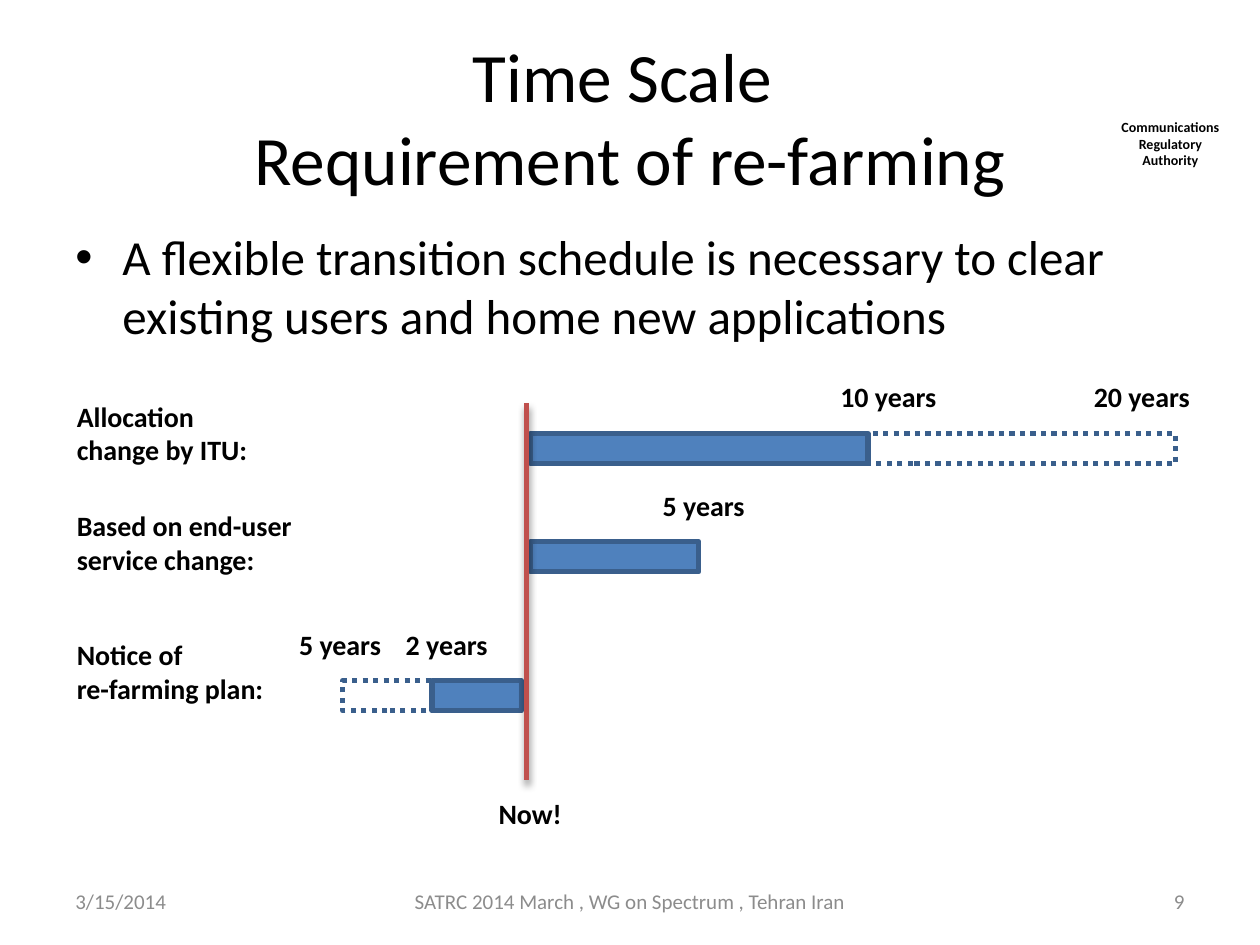
from lxml import etree
from pptx import Presentation
from pptx import util as u
from pptx.dml.color import RGBColor
from pptx.enum import dml, shapes, text
from pptx.oxml.ns import qn

BLACK = RGBColor(0x00, 0x00, 0x00)
GREY = RGBColor(0x8C, 0x8C, 0x8C)
BLUE = RGBColor(0x4F, 0x81, 0xBD)
NAVY = RGBColor(0x3A, 0x5F, 0x8C)
RED = RGBColor(0xC0, 0x50, 0x4D)
LEFT, CENTER, RIGHT = text.PP_ALIGN.LEFT, text.PP_ALIGN.CENTER, text.PP_ALIGN.RIGHT

BAR_H = 0.61
NOW_X = 10.62
LABEL_X = 1.3
YEARS_W = 2.6


def add_text(s, words, x, y, w, h, size=16, color=BLACK, bold=True, align=LEFT,
             middle=False, bullet=False):
    sp = s.shapes.add_textbox(u.Cm(x), u.Cm(y), u.Cm(w), u.Cm(h))
    tf = sp.text_frame
    tf.word_wrap = True
    tf.vertical_anchor = text.MSO_ANCHOR.MIDDLE if middle else text.MSO_ANCHOR.TOP
    p = tf.paragraphs[0]
    p.text = words
    p.alignment = align
    if bullet:
        pPr = p._p.get_or_add_pPr()
        pPr.set("marL", str(u.Cm(0.95)))
        pPr.set("indent", str(-u.Cm(0.95)))
        etree.SubElement(pPr, qn("a:buFont"), typeface="Arial")
        etree.SubElement(pPr, qn("a:buChar"), char="•")
    for r in p.runs:
        r.font.name = "Calibri"
        r.font.size = u.Pt(size)
        r.font.bold = bold
        r.font.color.rgb = color


def add_bar(s, x, y, w, dotted=False):
    sp = s.shapes.add_shape(shapes.MSO_SHAPE.RECTANGLE,
                            u.Cm(x), u.Cm(y), u.Cm(w), u.Cm(BAR_H))
    sp.shadow.inherit = False
    sp.line.color.rgb = NAVY
    sp.line.width = u.Pt(3)
    if dotted:
        sp.fill.background()
        sp.line.dash_style = dml.MSO_LINE.ROUND_DOT
    else:
        sp.fill.solid()
        sp.fill.fore_color.rgb = BLUE


def add_now_line(s, top, bottom):
    line = s.shapes.add_connector(shapes.MSO_CONNECTOR.STRAIGHT,
                                  u.Cm(NOW_X), u.Cm(top), u.Cm(NOW_X), u.Cm(bottom))
    line.line.color.rgb = RED
    line.line.width = u.Pt(3)
    effects = etree.SubElement(line._element.spPr, qn("a:effectLst"))
    shadow = etree.SubElement(effects, qn("a:outerShdw"), blurRad=str(u.Pt(4)),
                              dist=str(u.Pt(3)), dir="5400000", rotWithShape="0")
    color = etree.SubElement(shadow, qn("a:srgbClr"), val=str(BLACK))
    etree.SubElement(color, qn("a:alpha"), val="43000")


def add_timeline(s):
    for words, y in (("Allocation \vchange by ITU:", 7.92),
                     ("Based on end-user \vservice change:", 10.13),
                     ("Notice of \vre-farming plan:", 12.73)):
        add_text(s, words, LABEL_X, y, 5.3, 1.63)

    for x, y, w, dotted in ((13.11, 8.74, 10.59, True),
                            (10.69, 8.74, 6.81, False),
                            (10.69, 10.92, 3.4, False),
                            (6.91, 13.72, 1.8, True),
                            (8.71, 13.72, 1.8, False)):
        add_bar(s, x, y, w, dotted)

    for words, x, y in (("10 years", 16.69, 7.52), ("20 years", 21.8, 7.52),
                        ("5 years", 13.11, 9.73),
                        ("5 years", 5.78, 12.52), ("2 years", 7.93, 12.52)):
        add_text(s, words, x, y, YEARS_W, 0.94)

    add_now_line(s, 8.13, 15.72)
    add_text(s, "Now!", 9.09, 15.93, 3.2, 0.94, align=CENTER)


def add_footer(s):
    for words, x, w, align in (
            ("3/15/2014", 1.27, 5.92, LEFT),
            ("SATRC 2014 March , WG on Spectrum , Tehran Iran", 7.9, 9.6, CENTER),
            ("9", 18.21, 5.92, RIGHT)):
        add_text(s, words, x, 17.65, w, 1.02, size=12, color=GREY, bold=False,
                 align=align, middle=True)


def main():
    prs = Presentation()
    prs.slide_width, prs.slide_height = u.Cm(25.4), u.Cm(19.05)
    s = prs.slides.add_slide(prs.slide_layouts[6])
    add_text(s, "Communications Regulatory Authority", 22.3, 2.26, 2.59, 1.27,
             size=8, align=CENTER)
    add_text(s, "Time Scale \vRequirement of re-farming", 1.27, 0.76, 22.86, 3.18,
             size=39.6, bold=False, align=CENTER, middle=True)
    add_text(s, "A flexible transition schedule is necessary to clear existing users "
             "and home new applications", 1.27, 4.45, 22.86, 12.57,
             size=28, bold=False, bullet=True)
    add_timeline(s)
    add_footer(s)
    prs.save("out.pptx")


if __name__ == "__main__":
    main()
